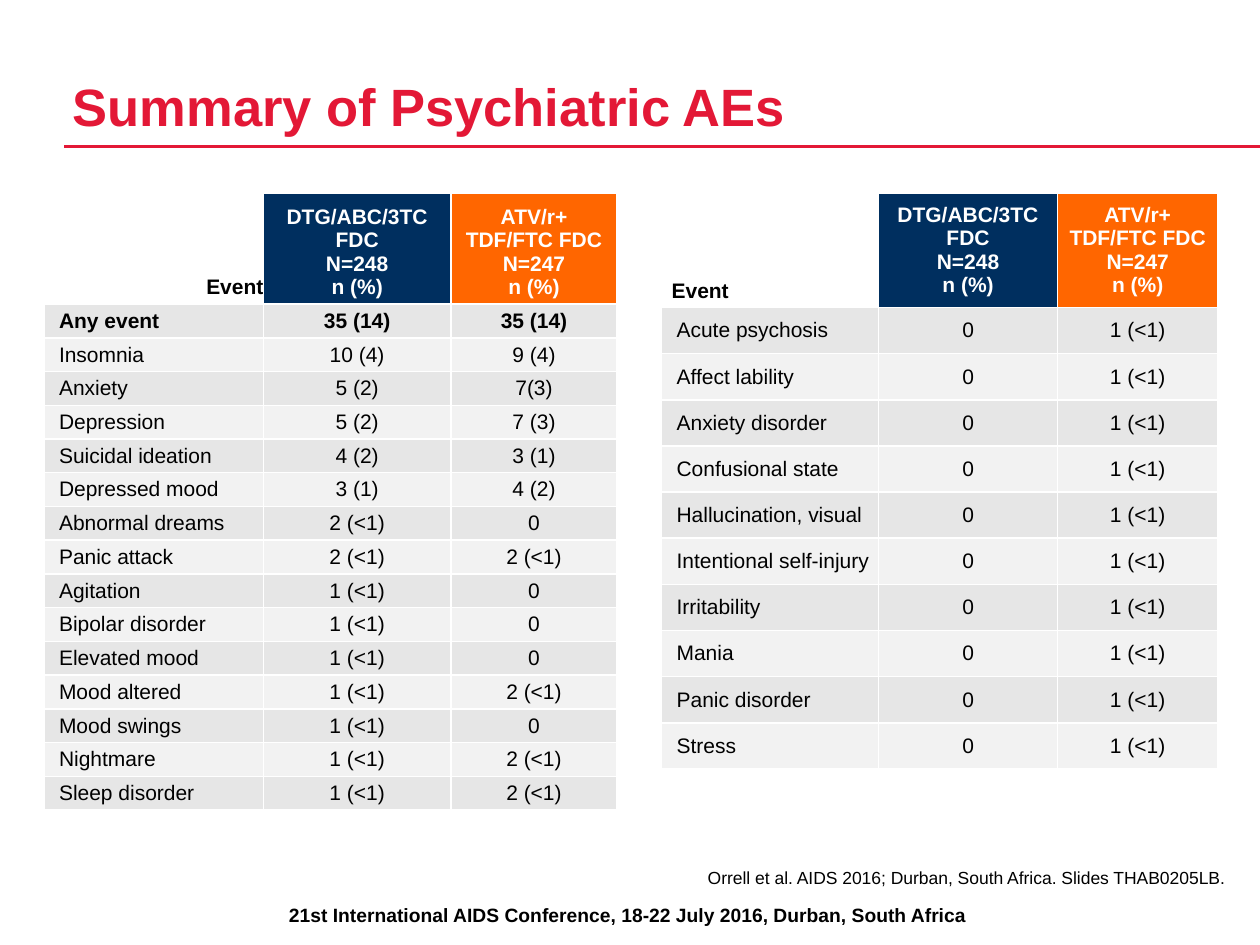
from lxml.etree import SubElement
from pptx import Presentation
from pptx.dml.color import RGBColor
from pptx.enum.shapes import MSO_CONNECTOR
from pptx.enum.text import MSO_ANCHOR, PP_ALIGN
from pptx.oxml.ns import qn
from pptx.util import Cm, Pt

RED, NAVY, ORANGE = "E31836", "002F5F", "FF6600"
BLACK, WHITE = "000000", "FFFFFF"
BANDS = ("E6E6E6", "F2F2F2")

# "\n" starts a paragraph, "\v" breaks a line inside one
HEADER = (
    "Event",
    "DTG/ABC/3TC\nFDC\vN=248\vn (%)",
    "ATV/r+\nTDF/FTC FDC\nN=247\vn (%)",
)
COMMON_EVENTS = [
    ("Any event", "35 (14)", "35 (14)"),
    ("Insomnia", "10 (4)", "9 (4)"),
    ("Anxiety", "5 (2)", "7(3)"),
    ("Depression", "5 (2)", "7 (3)"),
    ("Suicidal ideation", "4 (2)", "3 (1)"),
    ("Depressed mood", "3 (1)", "4 (2)"),
    ("Abnormal dreams", "2 (<1)", "0"),
    ("Panic attack", "2 (<1)", "2 (<1)"),
    ("Agitation", "1 (<1)", "0"),
    ("Bipolar disorder", "1 (<1)", "0"),
    ("Elevated mood", "1 (<1)", "0"),
    ("Mood altered", "1 (<1)", "2 (<1)"),
    ("Mood swings", "1 (<1)", "0"),
    ("Nightmare", "1 (<1)", "2 (<1)"),
    ("Sleep disorder", "1 (<1)", "2 (<1)"),
]
SINGLE_EVENTS = [
    (event, "0", "1 (<1)")
    for event in (
        "Acute psychosis", "Affect lability", "Anxiety disorder",
        "Confusional state", "Hallucination, visual", "Intentional self-injury",
        "Irritability", "Mania", "Panic disorder", "Stress",
    )
]

# Lengths in cm
TABLES = [
    dict(left=0.89, columns=(4.42, 3.78, 3.35), header_height=2.24, row_height=0.68,
         rows=COMMON_EVENTS, event_align=PP_ALIGN.RIGHT, header_anchor=MSO_ANCHOR.BOTTOM),
    dict(left=13.34, columns=(4.37, 3.61, 3.23), header_height=2.31, row_height=0.93,
         rows=SINGLE_EVENTS, event_align=PP_ALIGN.LEFT, header_anchor=MSO_ANCHOR.MIDDLE),
]
TABLE_TOP = 3.89
TEXTS = [
    dict(text="Summary of Psychiatric AEs", place=(1.47, 0.43, 20.96, 2.34),
         anchor=MSO_ANCHOR.BOTTOM, font=dict(size=Pt(30), bold=True), color=RED,
         para=dict(line_spacing=Pt(35))),
    dict(text="Orrell et al. AIDS 2016; Durban, South Africa. Slides THAB0205LB.",
         place=(1.47, 17.48, 23.22, 0.51), anchor=MSO_ANCHOR.TOP,
         font=dict(size=Pt(10), bold=False), color=BLACK,
         para=dict(alignment=PP_ALIGN.RIGHT, space_after=Pt(3))),
    dict(text="21st International AIDS Conference, 18-22 July 2016, Durban, South Africa",
         place=(0.15, 18.08, 25.02, 0.74), anchor=MSO_ANCHOR.MIDDLE,
         font=dict(size=Pt(11), bold=True), color=BLACK,
         para=dict(alignment=PP_ALIGN.CENTER)),
]


def rgb(color):
    return RGBColor.from_string(color)


def set_all(target, values):
    for name, value in values.items():
        setattr(target, name, value)


def set_margins(target, sides, ends):
    set_all(target, dict(margin_left=Cm(sides), margin_right=Cm(sides),
                         margin_top=Cm(ends), margin_bottom=Cm(ends)))


def format_paragraphs(frame, font, color, para_format):
    for para in frame.paragraphs:
        set_all(para, para_format)
        for span in para.runs:
            set_all(span.font, dict(font, name="Arial"))
            span.font.color.rgb = rgb(color)


def add_text(page, text, place, anchor, font, color, para):
    box = page.shapes.add_textbox(*map(Cm, place))
    frame = box.text_frame
    set_all(frame, dict(text=text, word_wrap=True, vertical_anchor=anchor))
    set_margins(frame, 0, 0)
    format_paragraphs(frame, font, color, para)


def add_borders(cell):
    properties = cell._tc.get_or_add_tcPr()
    for side in ("a:lnL", "a:lnR", "a:lnT", "a:lnB"):
        line = SubElement(properties, qn(side), w=str(Pt(1)))
        fill = SubElement(line, qn("a:solidFill"))
        SubElement(fill, qn("a:srgbClr"), val=WHITE)


def fill_cell(cell, text, fill, color, bold, align, anchor, margins):
    add_borders(cell)
    if fill:
        cell.fill.solid()
        cell.fill.fore_color.rgb = rgb(fill)
    else:
        cell.fill.background()
    cell.text_frame.text = text
    cell.vertical_anchor = anchor
    set_margins(cell, *margins)
    format_paragraphs(cell.text_frame, dict(size=Pt(12), bold=bold), color,
                      dict(alignment=align))
    if align == PP_ALIGN.LEFT:
        for para in cell.text_frame.paragraphs:
            para._p.get_or_add_pPr().set("marL", str(Cm(0.2)))


def add_event_table(page, left, columns, header_height, row_height, rows,
                    event_align, header_anchor):
    heights = [header_height] + [row_height] * len(rows)
    frame = page.shapes.add_table(len(heights), len(columns), Cm(left), Cm(TABLE_TOP),
                                  Cm(sum(columns)), Cm(sum(heights)))
    table = frame.table
    set_all(table, dict(first_row=False, horz_banding=False))
    for column, width in zip(table.columns, columns):
        column.width = Cm(width)
    for row, height in zip(table.rows, heights):
        row.height = Cm(height)

    fill_cell(table.cell(0, 0), HEADER[0], None, BLACK, True, event_align,
              MSO_ANCHOR.BOTTOM, (0, 0.1))
    for number, fill in enumerate((NAVY, ORANGE), 1):
        fill_cell(table.cell(0, number), HEADER[number], fill, WHITE, True,
                  PP_ALIGN.CENTER, header_anchor, (0.1, 0.1))
    for row_number, values in enumerate(rows, 1):
        for number, value in enumerate(values):
            fill_cell(table.cell(row_number, number), value, BANDS[(row_number - 1) % 2],
                      BLACK, values[0] == "Any event",
                      PP_ALIGN.CENTER if number else PP_ALIGN.LEFT,
                      MSO_ANCHOR.MIDDLE, (0.1, 0))


def add_title_rule(page):
    rule = page.shapes.add_connector(MSO_CONNECTOR.STRAIGHT, Cm(1.3), Cm(2.95),
                                     Cm(25.4), Cm(2.95))
    rule.line.color.rgb = rgb(RED)
    rule.line.width = Pt(2)
    SubElement(rule._element.spPr, qn("a:effectLst"))


def main():
    deck = Presentation()
    set_all(deck, dict(slide_width=Cm(25.4), slide_height=Cm(19.05)))
    page = deck.slides.add_slide(deck.slide_layouts[6])
    add_title_rule(page)
    for text in TEXTS:
        add_text(page, **text)
    for table in TABLES:
        add_event_table(page, **table)
    deck.save("out.pptx")


if __name__ == "__main__":
    main()
